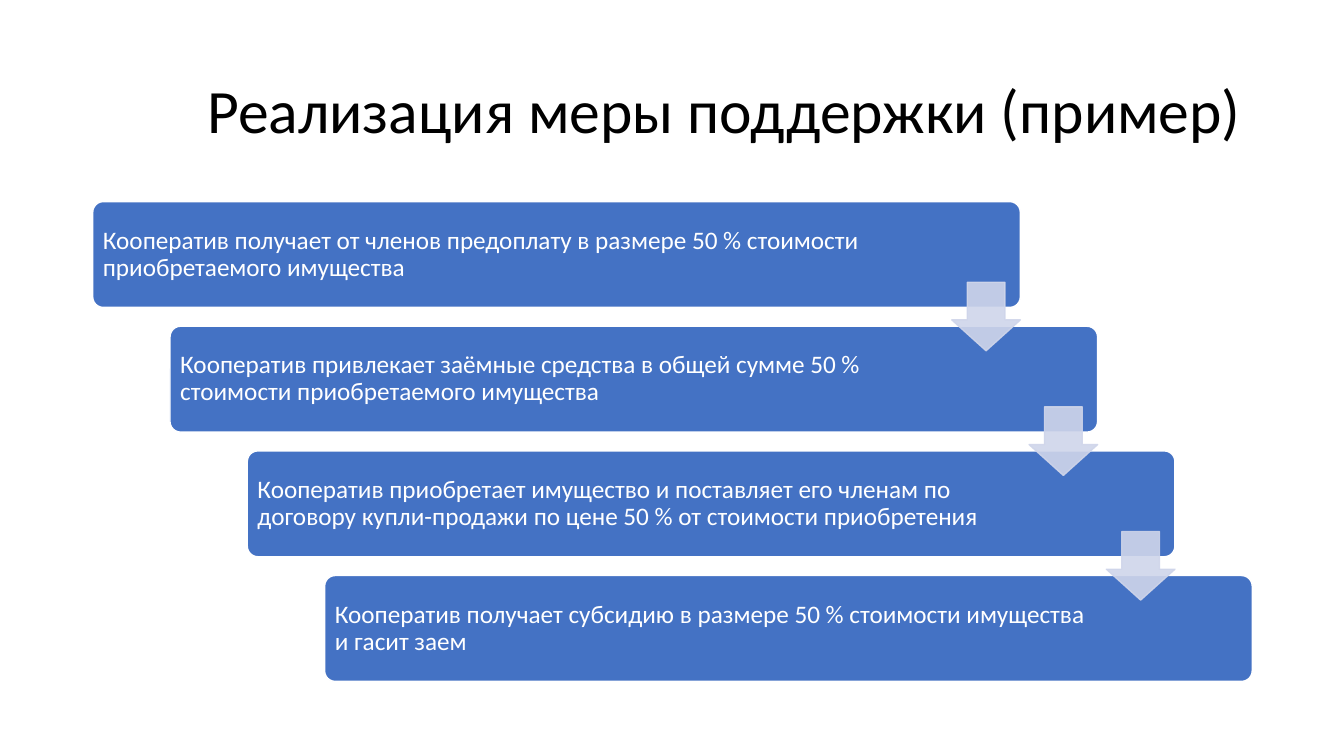
from dataclasses import dataclass

from lxml import etree
from pptx import Presentation
from pptx import util as u
from pptx.dml.color import RGBColor
from pptx.enum import shapes, text
from pptx.oxml.ns import qn


@dataclass(frozen=True)
class Theme:
    font: str = "Calibri"
    title_size: int = 44
    step_size: int = 18
    ink: str = "000000"
    white: str = "FFFFFF"
    step: str = "4472C4"
    arrow: str = "CFD5EA"
    arrow_opacity: int = 90


STEPS = [
    "Кооператив получает от членов предоплату в размере 50 % стоимости приобретаемого имущества",
    "Кооператив привлекает заёмные средства в общей сумме 50 % стоимости приобретаемого имущества",
    "Кооператив приобретает имущество и поставляет его членам по договору купли-продажи "
    "по цене 50 % от стоимости приобретения",
    "Кооператив получает субсидию в размере 50 % стоимости имущества и гасит заем",
]
LEFT, TOP, WIDTH, HEIGHT = 0.92, 2, 9.2, 1.05
SHIFT_X = (3.22 - LEFT) / (len(STEPS) - 1)
SHIFT_Y = (5.71 - TOP) / (len(STEPS) - 1)
ARROW_SIZE = 0.68
ARROW_DROP = 0.8


def write_text(shape, wording, *, size, color, font, align, insets):
    frame = shape.text_frame
    frame.word_wrap = True
    frame.auto_size = text.MSO_AUTO_SIZE.NONE
    frame.vertical_anchor = text.MSO_ANCHOR.MIDDLE
    (frame.margin_left, frame.margin_top,
     frame.margin_right, frame.margin_bottom) = map(u.Inches, insets)
    para = frame.paragraphs[0]
    para.alignment = align
    para.line_spacing = 0.9
    span = para.add_run()
    span.text = wording
    span.font.name = font
    span.font.size = u.Pt(size)
    span.font.color.rgb = RGBColor.from_string(color)


class StepSlide:
    def __init__(self, deck, theme):
        self.theme = theme
        self.page = deck.slides.add_slide(deck.slide_layouts[5])

    def title(self, wording, left, top, width, height):
        box = self.page.shapes.title
        box.left, box.top = u.Inches(left), u.Inches(top)
        box.width, box.height = u.Inches(width), u.Inches(height)
        write_text(box, wording, size=self.theme.title_size, color=self.theme.ink,
                   font=self.theme.font, align=text.PP_ALIGN.RIGHT,
                   insets=(0.1, 0.05, 0.1, 0.05))

    def shape(self, kind, left, top, width, height, adjustments, fill, line):
        shape = self.page.shapes.add_shape(
            kind, u.Inches(left), u.Inches(top), u.Inches(width), u.Inches(height))
        shape.shadow.inherit = False
        for index, value in enumerate(adjustments):
            shape.adjustments[index] = value
        shape.fill.solid()
        shape.fill.fore_color.rgb = RGBColor.from_string(fill)
        shape.line.color.rgb = RGBColor.from_string(line)
        shape.line.width = u.Pt(1)
        return shape

    def step(self, wording, left, top):
        box = self.shape(shapes.MSO_SHAPE.ROUNDED_RECTANGLE, left, top, WIDTH, HEIGHT,
                         [0.1], self.theme.step, self.theme.white)
        write_text(box, wording, size=self.theme.step_size, color=self.theme.white,
                   font=self.theme.font, align=text.PP_ALIGN.LEFT,
                   insets=(0.07, 0.07, 1.54, 0.07))

    def arrow(self, left, top):
        arrow = self.shape(shapes.MSO_SHAPE.DOWN_ARROW, left, top, ARROW_SIZE, ARROW_SIZE,
                           [0.55, 0.45], self.theme.arrow, self.theme.arrow)
        for color in arrow.element.spPr.iter(qn("a:srgbClr")):
            alpha = etree.SubElement(color, qn("a:alpha"))
            alpha.set("val", str(self.theme.arrow_opacity * 1000))


def main():
    deck = Presentation()
    deck.slide_width, deck.slide_height = u.Inches(13.33), u.Inches(7.5)
    slide = StepSlide(deck, Theme())
    slide.title("Реализация меры поддержки (пример)", LEFT, 0.4, 11.5, 1.45)
    corners = [(LEFT + i * SHIFT_X, TOP + i * SHIFT_Y) for i in range(len(STEPS))]
    for wording, (left, top) in zip(STEPS, corners):
        slide.step(wording, left, top)
    for left, top in corners[:-1]:
        slide.arrow(left + WIDTH - ARROW_SIZE, top + ARROW_DROP)
    deck.save("out.pptx")


if __name__ == "__main__":
    main()
